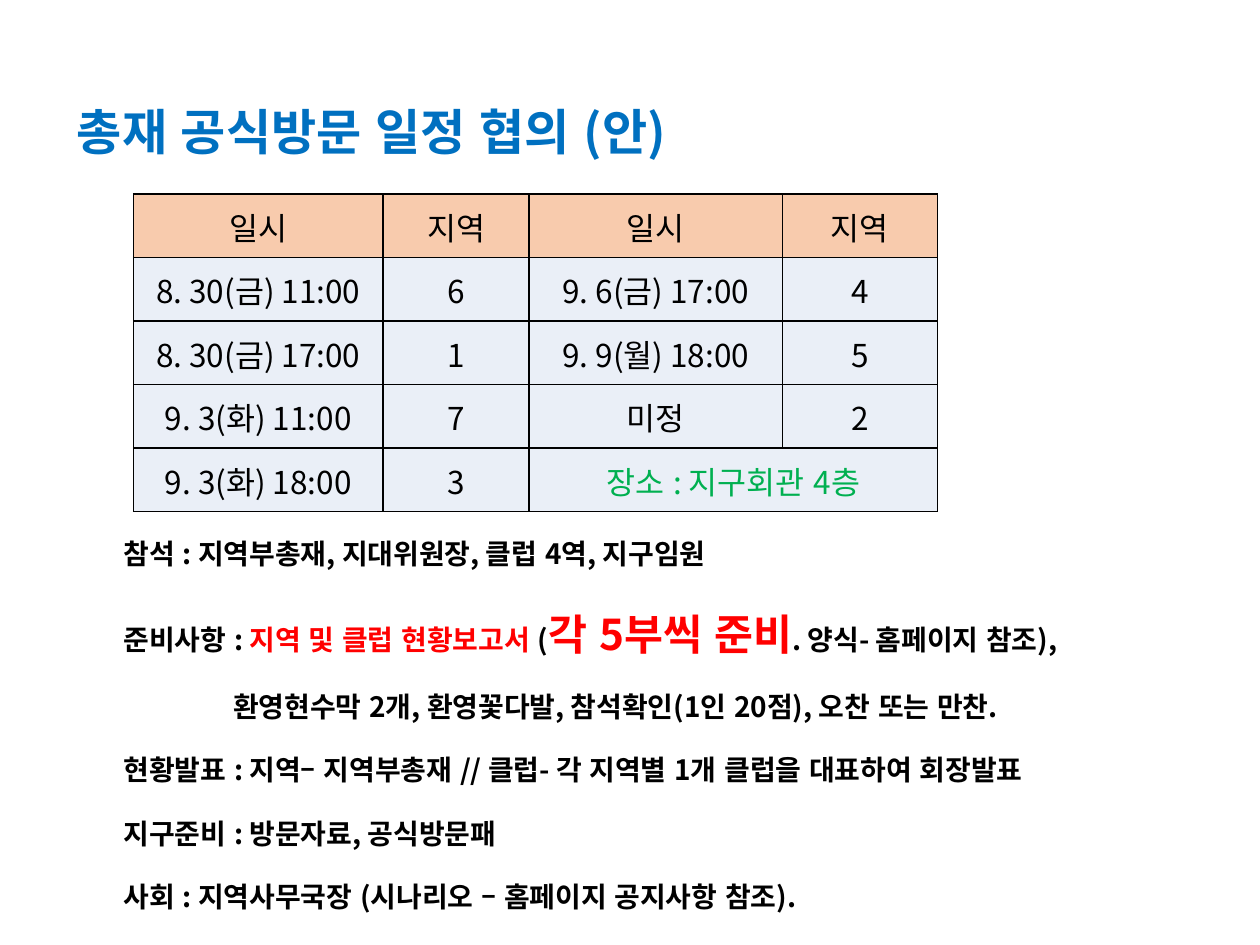
from lxml import etree
from pptx import Presentation
from pptx.dml.color import RGBColor
from pptx.enum import text as t
from pptx.oxml import ns
from pptx.util import Inches, Pt

FONT = "Noto Sans CJK KR"
HUES = {"title": "0070C0", "head": "F8CBAD", "cell": "EAEFF7",
        "ink": "000000", "alert": "FF0000", "place": "00B050"}


def add_run(para, words, size, hue, bold):
    run = para.add_run()
    run.text = words
    look = {"name": FONT, "size": Pt(size), "bold": bold}
    for key, val in look.items():
        setattr(run.font, key, val)
    run.font.color.rgb = RGBColor.from_string(HUES[hue])
    props = run.font._element
    props.set("lang", "ko-KR")
    props.set("kern", "0")
    etree.SubElement(props, ns.qn("a:ea"), typeface=FONT)


def set_frame(shape, box, anchor):
    """Move a placeholder and give it a plain frame of fixed size."""
    for key, val in zip(("left", "top", "width", "height"), box):
        setattr(shape, key, Inches(val))
    look = {"word_wrap": True, "auto_size": t.MSO_AUTO_SIZE.NONE,
            "vertical_anchor": anchor, "margin_top": 0, "margin_bottom": 0}
    for key, val in look.items():
        setattr(shape.text_frame, key, val)


prs = Presentation()
prs.slide_width, prs.slide_height = Inches(10), Inches(7.5)
slide = prs.slides.add_slide(prs.slide_layouts[1])

# Title
title = slide.shapes.title
set_frame(title, (0.51, 0.64, 9, 0.8), t.MSO_ANCHOR.MIDDLE)
para = title.text_frame.paragraphs[0]
para.alignment = t.PP_ALIGN.LEFT
add_run(para, "총재 공식방문 일정 협의 (안)", 28.1, "title", True)

# Notes below the table: left indent in inches, then runs of words, size, hue
notes = [
    (0, [("참석 : 지역부총재, 지대위원장, 클럽 4역, 지구임원", 16, "ink")]),
    (0, [("준비사항 : ", 16, "ink"), ("지역 및 클럽 현황보고서 ", 16, "alert"),
         ("(", 16, "ink"), ("각 5부씩 준비", 24.2, "alert"),
         (". 양식- 홈페이지 참조),", 16, "ink")]),
    (0.87, [("환영현수막 2개, 환영꽃다발, 참석확인(1인 20점), 오찬 또는 만찬.", 16, "ink")]),
    (0, [("현황발표 : 지역– 지역부총재 // 클럽- 각 지역별 1개 클럽을 대표하여 회장발표",
          16, "ink")]),
    (0, [("지구준비 : 방문자료, 공식방문패", 16, "ink")]),
    (0, [("사회 : 지역사무국장 (시나리오 – 홈페이지 공지사항 참조).", 16, "ink")]),
]
body = slide.placeholders[1]
set_frame(body, (0.88, 4.1, 8.63, 3.15), t.MSO_ANCHOR.BOTTOM)
for i, (left, runs) in enumerate(notes):
    frame = body.text_frame
    para = frame.add_paragraph() if i else frame.paragraphs[0]
    para.line_spacing = 1.5
    para.space_before = Pt(7.5)
    props = para._p.get_or_add_pPr()
    props.set("marL", str(Inches(left)))
    props.set("indent", "0")
    etree.SubElement(props, ns.qn("a:buNone"))
    for words, size, hue in runs:
        add_run(para, words, size, hue, True)

# Schedule
rows = [
    ("일시", "지역", "일시", "지역"),
    ("8. 30(금) 11:00", "6", "9. 6(금) 17:00", "4"),
    ("8. 30(금) 17:00", "1", "9. 9(월) 18:00", "5"),
    ("9. 3(화) 11:00", "7", "미정", "2"),
    ("9. 3(화) 18:00", "3", "장소 : 지구회관 4층", ""),
]
widths = (1.98, 1.16, 2.01, 1.23)
table = slide.shapes.add_table(
    len(rows), len(widths), Inches(1.06), Inches(1.54),
    Inches(sum(widths)), Inches(2.52)).table
for col, width in zip(table.columns, widths):
    col.width = Inches(width)
table.cell(4, 2).merge(table.cell(4, 3))
pad = {"margin_left": Inches(0.01), "margin_right": Inches(0.01),
       "margin_top": Inches(0.01), "margin_bottom": 0,
       "vertical_anchor": t.MSO_ANCHOR.MIDDLE}
for r, row in enumerate(rows):
    for c, words in enumerate(row):
        cell = table.cell(r, c)
        for key, val in pad.items():
            setattr(cell, key, val)
        cell.fill.solid()
        cell.fill.fore_color.rgb = RGBColor.from_string(HUES["cell" if r else "head"])
        props = cell._tc.get_or_add_tcPr()
        for i, side in enumerate(("lnL", "lnR", "lnT", "lnB")):
            line = etree.Element(ns.qn("a:" + side), w=str(Pt(1)))
            fill = etree.SubElement(line, ns.qn("a:solidFill"))
            etree.SubElement(fill, ns.qn("a:srgbClr"), val=HUES["ink"])
            props.insert(i, line)
        if words:
            para = cell.text_frame.paragraphs[0]
            para.alignment = t.PP_ALIGN.CENTER
            hue = "place" if cell.is_merge_origin else "ink"
            add_run(para, words, 18, hue, False)

prs.save("out.pptx")
